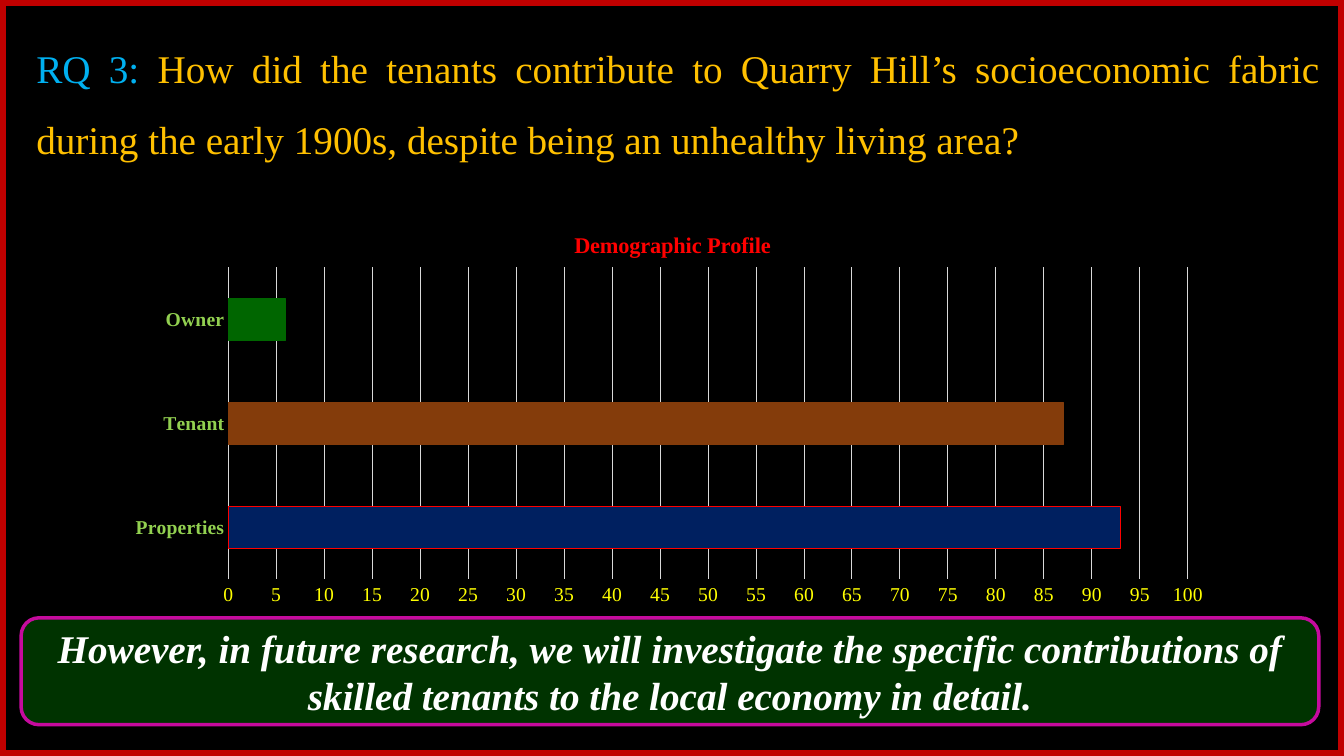
from dataclasses import dataclass

from lxml import etree
from pptx import Presentation
from pptx import util as u
from pptx.chart.data import CategoryChartData
from pptx.dml.color import RGBColor
from pptx.enum import chart as charts, shapes, text
from pptx.oxml.ns import qn


@dataclass(frozen=True)
class Theme:
    """Colours, font and type sizes of the slide."""
    font: str = "Times New Roman"
    ground: str = "000000"
    frame: str = "C00000"
    label: str = "00B0F0"
    question: str = "FFC000"
    heading: str = "FF0000"
    outline: str = "FF0000"
    category: str = "92D050"
    scale: str = "FFFF00"
    grid: str = "D9D9D9"
    series: str = "4472C4"
    panel: str = "003300"
    panel_line: str = "C50B9D"
    panel_text: str = "FFFFFF"
    body_size: int = 28
    heading_size: int = 16
    axis_size: int = 14


THEME = Theme()
WIDTH, HEIGHT = 13.33, 7.5
PROFILE = {"Properties": (93, "002060", THEME.outline),
           "Tenant": (87, "843C0B", "843C0B"),
           "Owner": (6, "006600", "006600")}


def rgb(code):
    """Turn a hex code into a colour."""
    return RGBColor.from_string(code)


def set_font(font, size, color, bold=False, italic=False):
    """Format a font in the theme's typeface."""
    font.name, font.size = THEME.font, u.Pt(size)
    font.bold, font.italic = bold, italic
    font.color.rgb = rgb(color)


def add_text(paragraph, words, **style):
    """Append a formatted run to a paragraph."""
    run = paragraph.add_run()
    run.text = words
    set_font(run.font, **style)


def set_line(line, color, width=0.75):
    """Give a line its colour and width."""
    line.color.rgb = rgb(color)
    line.width = u.Pt(width)


def set_layout(parent, index, **shares):
    """Place a chart part by shares of the chart's size."""
    for old in parent.findall(qn("c:layout")):
        parent.remove(old)
    layout = etree.Element(qn("c:layout"))
    manual = etree.SubElement(layout, qn("c:manualLayout"))
    settings = {"xMode": "edge", "yMode": "edge", **shares}
    if "w" in shares:
        settings = {"layoutTarget": "inner", **settings}
    for tag, value in settings.items():
        etree.SubElement(manual, qn(f"c:{tag}")).set("val", str(value))
    parent.insert(index, layout)


def add_box(slide, kind, box, line, width, fill=None):
    """Add an outlined shape in the given box."""
    shape = slide.shapes.add_shape(kind, *map(u.Inches, box))
    shape.shadow.inherit = False
    set_line(shape.line, line, width)
    if fill:
        shape.fill.solid()
        shape.fill.fore_color.rgb = rgb(fill)
    else:
        shape.fill.background()
    return shape


def place_question(slide, box):
    """Set the research question in the title placeholder."""
    title = slide.shapes.title
    title.left, title.top, title.width, title.height = map(u.Inches, box)
    frame = title.text_frame
    frame.word_wrap = True
    frame.auto_size = text.MSO_AUTO_SIZE.NONE
    frame.vertical_anchor = text.MSO_ANCHOR.MIDDLE
    question = frame.paragraphs[0]
    question.alignment = text.PP_ALIGN.JUSTIFY
    question.line_spacing = 1.5
    margins = question._p.get_or_add_pPr()
    margins.set("marL", str(u.Inches(0.13)))
    margins.set("indent", "0")
    add_text(question, "RQ 3: ", size=THEME.body_size, color=THEME.label)
    add_text(question, "How did the tenants contribute to Quarry Hill’s socioeconomic fabric "
             "during the early 1900s, despite being an unhealthy living area?",
             size=THEME.body_size, color=THEME.question)


def style_axes(chart):
    """Format the category and value axes."""
    names, scale = chart.category_axis, chart.value_axis
    for axis in (names, scale):
        axis.major_tick_mark = axis.minor_tick_mark = charts.XL_TICK_MARK.NONE
    set_font(names.tick_labels.font, THEME.axis_size, THEME.category, bold=True)
    set_font(scale.tick_labels.font, THEME.axis_size, THEME.scale)
    set_line(names.format.line, THEME.grid)
    scale.format.line.fill.background()
    scale.minimum_scale, scale.maximum_scale, scale.major_unit = 0, 100, 5
    scale.has_major_gridlines = True
    set_line(scale.major_gridlines.format.line, THEME.grid)


def place_profile(slide, box):
    """Draw the demographic bar chart in the given box."""
    data = CategoryChartData(number_format="General")
    data.categories = list(PROFILE)
    data.add_series("Series 1", [value for value, _, _ in PROFILE.values()])
    chart = slide.shapes.add_chart(charts.XL_CHART_TYPE.BAR_CLUSTERED,
                                   *map(u.Inches, box), data).chart
    chart.has_legend = False
    chart.has_title = True
    heading = chart.chart_title
    add_text(heading.text_frame.paragraphs[0], "Demographic Profile",
             size=THEME.heading_size, color=THEME.heading, bold=True)
    heading.include_in_layout = False
    set_layout(heading._element, 1, x=0.41, y=0.05)
    set_layout(chart._chartSpace.chart.plotArea, 0, x=0.1, y=0.15, w=0.87, h=0.77)
    style_axes(chart)
    plot = chart.plots[0]
    plot.gap_width, plot.vary_by_categories = 150, False
    bars = plot.series[0]
    bars.format.fill.solid()
    bars.format.fill.fore_color.rgb = rgb(THEME.series)
    set_line(bars.format.line, THEME.outline)
    for index, (_, color, edge) in enumerate(PROFILE.values()):
        bar = bars.points[index].format
        bar.fill.solid()
        bar.fill.fore_color.rgb = rgb(color)
        set_line(bar.line, edge)


def place_outlook(slide, box):
    """Add the closing statement panel."""
    panel = add_box(slide, shapes.MSO_SHAPE.ROUNDED_RECTANGLE, box,
                    THEME.panel_line, 2.5, THEME.panel)
    frame = panel.text_frame
    frame.word_wrap = True
    frame.vertical_anchor = text.MSO_ANCHOR.MIDDLE
    outlook = frame.paragraphs[0]
    outlook.alignment = text.PP_ALIGN.CENTER
    add_text(outlook, "However, in future research, we will investigate the specific "
             "contributions of skilled tenants to the local economy in detail.",
             size=THEME.body_size, color=THEME.panel_text, bold=True, italic=True)


def build_question_slide(deck):
    """Lay out the research question slide."""
    slide = deck.slides.add_slide(deck.slide_layouts[5])
    slide.background.fill.solid()
    slide.background.fill.fore_color.rgb = rgb(THEME.ground)
    inset = 0.02
    add_box(slide, shapes.MSO_SHAPE.RECTANGLE,
            (inset, inset, WIDTH - 2 * inset, HEIGHT - 2 * inset), THEME.frame, 6)
    place_question(slide, (0.13, 0.52, 13.06, 0.78))
    place_profile(slide, (1.17, 2.05, 10.94, 4.02))
    place_outlook(slide, (0.21, 6.13, 12.87, 1.06))


def main():
    """Build and save the deck."""
    deck = Presentation()
    deck.slide_width, deck.slide_height = u.Inches(WIDTH), u.Inches(HEIGHT)
    build_question_slide(deck)
    deck.save("out.pptx")


if __name__ == "__main__":
    main()
